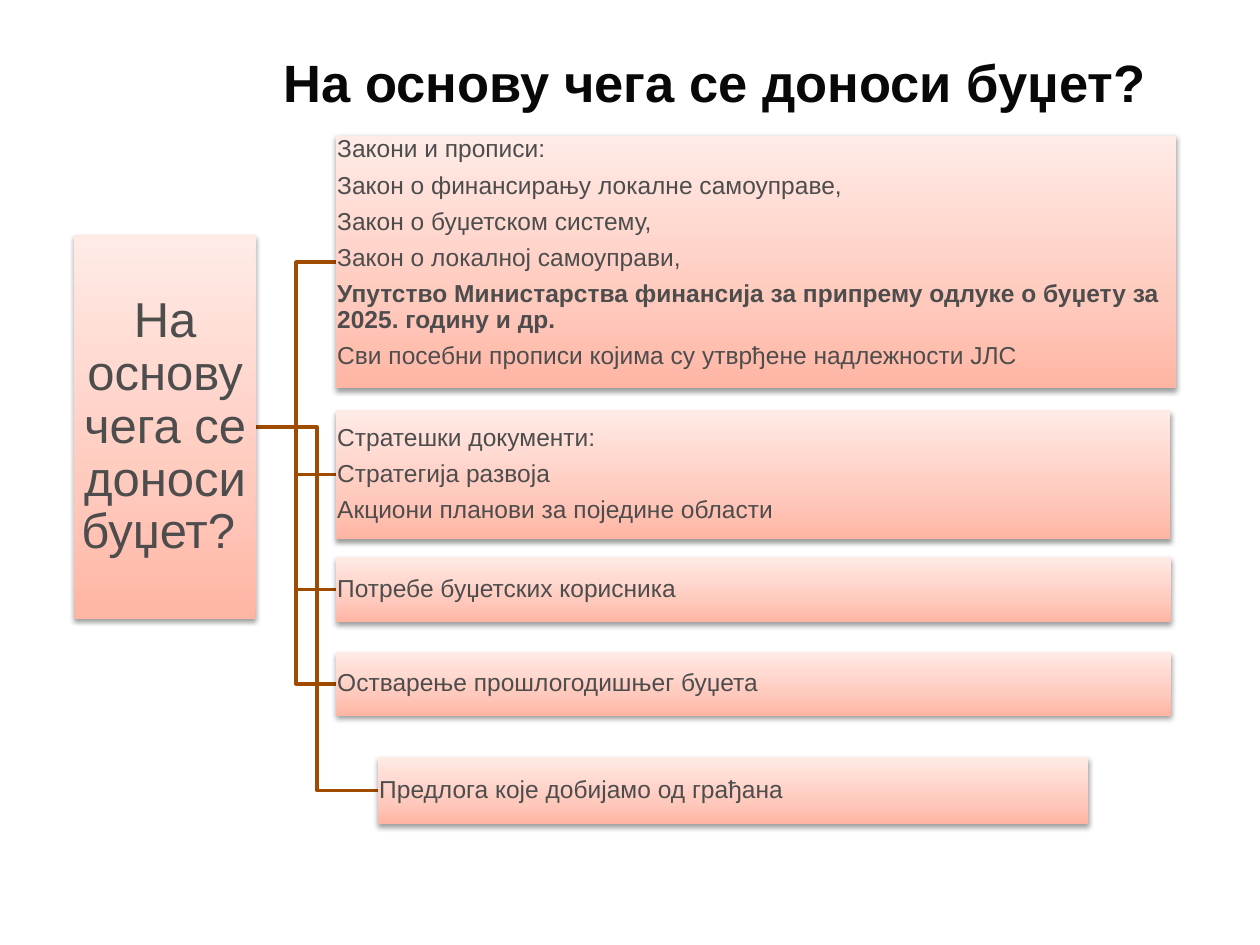
from copy import deepcopy

from lxml import etree
from pptx import Presentation
from pptx.dml.color import RGBColor
from pptx.enum.shapes import MSO_SHAPE
from pptx.enum.text import MSO_ANCHOR, PP_ALIGN
from pptx.oxml.ns import qn
from pptx.util import Pt

RECTANGLE = MSO_SHAPE.RECTANGLE
TOP, MIDDLE = MSO_ANCHOR.TOP, MSO_ANCHOR.MIDDLE
LEFT, CENTER, RIGHT = PP_ALIGN.LEFT, PP_ALIGN.CENTER, PP_ALIGN.RIGHT

FONT = "Arial"
TITLE_COLOR, TEXT_COLOR, LINE_COLOR = "080808", "4D4D4D", "9F4B00"
GRADIENT = [(0, "FFB5A3"), (0.35, "FFCABE"), (1, "FFEBE6")]

QUESTION = "На основу чега се доноси буџет?"
GUIDELINES = ("Упутство Министарства финансија за припрему одлуке "
              "о буџету за 2025. годину и др.")
ROOT_BOX = (42.5, 134.3, 103.7, 219.6)
BRANCHES = [
    ((192, 77.5, 480, 144.5), TOP, [
        "Закони и прописи:",
        "Закон о финансирању локалне самоуправе,",
        "Закон о буџетском систему,",
        "Закон о локалној самоуправи,",
        GUIDELINES,
        "Сви посебни прописи којима су утврђене надлежности ЈЛС",
    ]),
    ((192, 234.5, 476.5, 73.5), MIDDLE, [
        "Стратешки документи:",
        "Стратегија развоја",
        "Акциони планови за поједине области",
    ]),
    ((192, 318.5, 477, 37), MIDDLE, ["Потребе буџетских корисника"]),
    ((192, 372.5, 477, 36.5), MIDDLE, ["Остварење прошлогодишњег буџета"]),
    ((216, 432.5, 406, 38.5), MIDDLE, ["Предлога које добијамо од грађана"]),
]


def color(hex_string):
    """Return the colour for a hex string."""
    return RGBColor.from_string(hex_string)


def write_text(frame, lines, size, text_color, alignment, anchor, margin):
    """Fill a text frame with one paragraph for each line."""
    frame.word_wrap = True
    frame.vertical_anchor = anchor
    frame.margin_left = frame.margin_right = Pt(margin)
    frame.margin_top = frame.margin_bottom = Pt(margin)
    for index, line in enumerate(lines):
        paragraph = frame.add_paragraph() if index else frame.paragraphs[0]
        paragraph.text = line
        paragraph.alignment = alignment
        font = paragraph.font
        font.name, font.size = FONT, Pt(size)
        font.color.rgb = color(text_color)
        font.bold = line in (GUIDELINES, QUESTION)


def add_title(slide, box):
    """Add the right-aligned slide title."""
    frame = slide.shapes.add_textbox(*map(Pt, box)).text_frame
    write_text(frame, [QUESTION], 30, TITLE_COLOR, RIGHT, MIDDLE, 7.2)


def add_soft_shadow(shape):
    """Give a shape a soft shadow below it."""
    shape.shadow.inherit = False
    effects = shape._element.spPr.find(qn("a:effectLst"))
    shadow = etree.SubElement(
        effects, qn("a:outerShdw"), blurRad=str(Pt(3.1)), dist=str(Pt(1.6)),
        dir="5400000", rotWithShape="0")
    shade = etree.SubElement(shadow, qn("a:srgbClr"), val="000000")
    etree.SubElement(shade, qn("a:alpha"), val="38000")


def add_panel(slide, box, lines, size, alignment, anchor, margin):
    """Add a gradient panel with text."""
    shape = slide.shapes.add_shape(RECTANGLE, *map(Pt, box))
    shape.line.fill.background()
    shape.fill.gradient()
    shape.fill.gradient_angle = 90
    stop_list = shape._element.spPr.find(qn("a:gradFill")).find(qn("a:gsLst"))
    stop_list.append(deepcopy(stop_list[0]))
    for stop, (position, stop_color) in zip(shape.fill.gradient_stops, GRADIENT):
        stop.position = position
        stop.color.rgb = color(stop_color)
    add_soft_shadow(shape)
    write_text(shape.text_frame, lines, size, TEXT_COLOR, alignment, anchor, margin)
    for paragraph in shape.text_frame.paragraphs:
        paragraph.line_spacing = 0.9
        paragraph.space_after = Pt(0.39 * size)


def add_elbow(slide, root_box, branch_box):
    """Join the root's right edge to a branch's left edge with a bent line."""
    left, top, width, height = root_box
    start_x, start_y = left + width, top + height / 2
    end_x, end_y = branch_box[0], branch_box[1] + branch_box[3] / 2
    middle_x = (start_x + end_x) / 2
    builder = slide.shapes.build_freeform(Pt(start_x), Pt(start_y))
    corners = [(middle_x, start_y), (middle_x, end_y), (end_x, end_y)]
    builder.add_line_segments([(Pt(x), Pt(y)) for x, y in corners], close=False)
    shape = builder.convert_to_shape()
    shape.fill.background()
    shape.line.color.rgb = color(LINE_COLOR)
    shape.line.width = Pt(2)
    shape.shadow.inherit = False


def add_hierarchy(slide, root_box, branches):
    """Add the root panel, its branches and the lines between them."""
    for box, _, _ in reversed(branches):
        add_elbow(slide, root_box, box)
    add_panel(slide, root_box, [QUESTION + " "], 28, CENTER, MIDDLE, 1.4)
    slide.shapes[-1].text_frame.paragraphs[0].font.bold = False
    for box, anchor, lines in branches:
        add_panel(slide, box, lines, 14, LEFT, anchor, 0.7)


def main():
    """Build and save the presentation."""
    presentation = Presentation()
    presentation.slide_width, presentation.slide_height = Pt(720), Pt(540)
    slide = presentation.slides.add_slide(presentation.slide_layouts[6])
    add_title(slide, (96, 18, 566, 57.5))
    add_hierarchy(slide, ROOT_BOX, BRANCHES)
    presentation.save("out.pptx")


if __name__ == "__main__":
    main()
